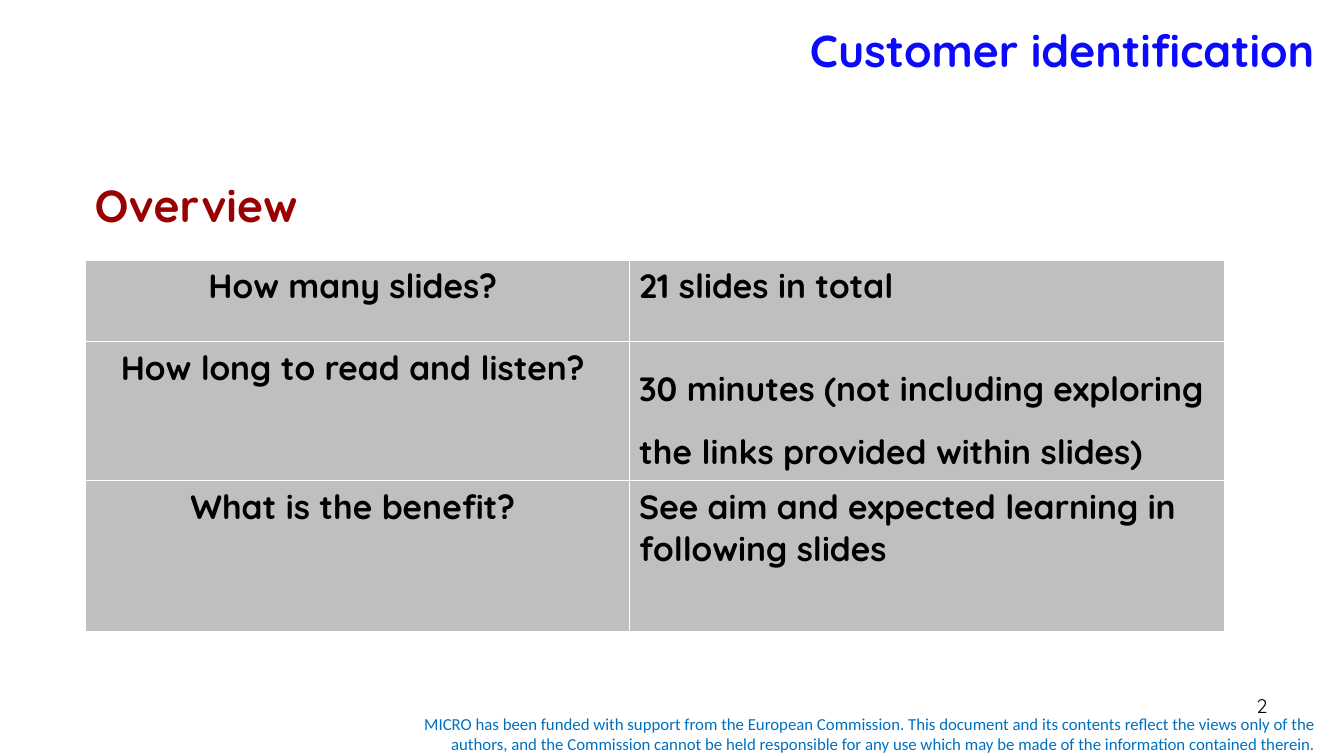
from lxml import etree
from pptx import Presentation
from pptx import util as u
from pptx.dml.color import RGBColor
from pptx.enum import text
from pptx.oxml import ns

TITLE = "Customer identification"
HEADING = "Overview"
PAGE_NUMBER = "2"
FUNDING = (
    "MICRO has been funded with support from the European Commission. "
    "This document and its contents reflect the views only of the authors, "
    "and the Commission cannot be held responsible for any use which may be "
    "made of the information contained therein."
)
OVERVIEW = [
    ("How many slides? ", "21 slides in total"),
    ("How long to read and listen? ",
     "30 minutes (not including exploring the links provided within slides)"),
    ("What is the benefit? ", "See aim and expected learning in following slides"),
]
COLUMN_WIDTHS = (5.39, 5.91)
ROW_HEIGHTS = (0.81, 1.38, 1.5)
READING_TIME = (1, 1)

BLUE = RGBColor(0x0B, 0x0A, 0xFD)
RED = RGBColor(0x99, 0x00, 0x00)
FOOTER_BLUE = RGBColor(0x00, 0x70, 0xC0)
BLACK = RGBColor(0x00, 0x00, 0x00)
GREY = RGBColor(0xBF, 0xBF, 0xBF)
WHITE = RGBColor(0xFF, 0xFF, 0xFF)
HEAD_FONT = "Quicksand"
FOOTER_FONT = "Calibri"
LEFT, CENTER, RIGHT = text.PP_ALIGN.LEFT, text.PP_ALIGN.CENTER, text.PP_ALIGN.RIGHT
TOP, MIDDLE = text.MSO_ANCHOR.TOP, text.MSO_ANCHOR.MIDDLE


def write(frame, words, size, color, align=LEFT, bold=False, font=HEAD_FONT):
    frame.text = words
    paragraph = frame.paragraphs[0]
    paragraph.alignment = align
    for run in paragraph.runs:
        run.font.name = font
        run.font.size = u.Pt(size)
        run.font.bold = bold
        run.font.color.rgb = color
    return paragraph


def add_text(slide, place, words, size, color, anchor=TOP, **style):
    frame = slide.shapes.add_textbox(*map(u.Inches, place)).text_frame
    frame.word_wrap = True
    frame.vertical_anchor = anchor
    write(frame, words, size, color, **style)
    return frame


def add_borders(cell):
    properties = cell._tc.get_or_add_tcPr()
    for side in ("lnL", "lnR", "lnT", "lnB"):
        line = etree.SubElement(properties, ns.qn("a:" + side), w=str(u.Pt(1)))
        fill = etree.SubElement(line, ns.qn("a:solidFill"))
        etree.SubElement(fill, ns.qn("a:srgbClr"), val=str(WHITE))


def add_overview(slide):
    place = (0.85, 2.58, sum(COLUMN_WIDTHS), sum(ROW_HEIGHTS))
    table = slide.shapes.add_table(
        len(OVERVIEW), len(COLUMN_WIDTHS), *map(u.Inches, place)).table
    for column, width in zip(table.columns, COLUMN_WIDTHS):
        column.width = u.Inches(width)
    for row, height in zip(table.rows, ROW_HEIGHTS):
        row.height = u.Inches(height)
    for r, entry in enumerate(OVERVIEW):
        for c, words in enumerate(entry):
            cell = table.cell(r, c)
            add_borders(cell)
            cell.fill.solid()
            cell.fill.fore_color.rgb = GREY
            paragraph = write(cell.text_frame, words, 24, BLACK,
                              align=LEFT if c else CENTER, bold=True)
            if (r, c) == READING_TIME:
                paragraph.line_spacing = 1.5


def main():
    deck = Presentation()
    deck.slide_width, deck.slide_height = u.Inches(13.33), u.Inches(7.5)
    slide = deck.slides.add_slide(deck.slide_layouts[6])
    add_text(slide, (3.75, 7.03, 9.4, 0.5), FUNDING, 12, FOOTER_BLUE,
             anchor=MIDDLE, align=RIGHT, font=FOOTER_FONT)
    title = add_text(slide, (1.14, 0, 12, 1.25), TITLE, 32, BLUE,
                     anchor=MIDDLE, align=RIGHT, bold=True)
    title.margin_bottom = u.Inches(0.32)
    add_overview(slide)
    add_text(slide, (9.56, 6.83, 3.11, 0.52), PAGE_NUMBER, 14, BLACK, align=RIGHT)
    add_text(slide, (0.84, 1.71, 2.9, 0.64), HEADING, 32, RED, bold=True)
    deck.save("out.pptx")


if __name__ == "__main__":
    main()
